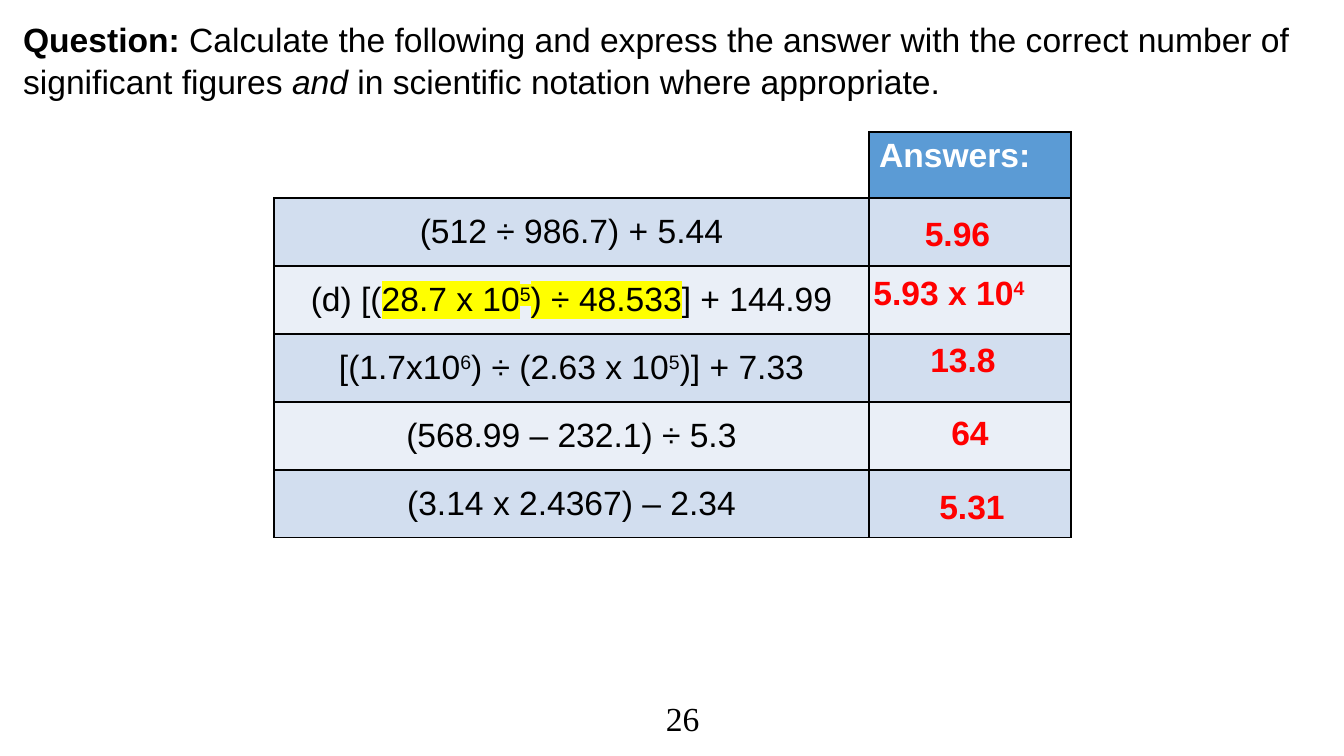
from lxml import etree
from pptx import Presentation
from pptx.dml.color import RGBColor
from pptx.enum.text import MSO_ANCHOR, MSO_AUTO_SIZE, PP_ALIGN
from pptx.oxml.ns import qn
from pptx.util import Emu, Pt

TOP, MID = MSO_ANCHOR.TOP, MSO_ANCHOR.MIDDLE
LEFT, CENTER = PP_ALIGN.LEFT, PP_ALIGN.CENTER
FIXED = MSO_AUTO_SIZE.NONE

BLACK = RGBColor(0x00, 0x00, 0x00)
WHITE = RGBColor(0xFF, 0xFF, 0xFF)
RED = RGBColor(0xFF, 0x00, 0x00)
YELLOW = RGBColor(0xFF, 0xFF, 0x00)
BLUE = RGBColor(0x5B, 0x9B, 0xD5)
PALE = RGBColor(0xD2, 0xDE, 0xEF)
LIGHT = RGBColor(0xEA, 0xEF, 0xF7)

WIDE, HIGH = 1344, 756
SCALE = 12192000 / WIDE
PLAIN = "{2D5ABB26-0587-4C30-8999-92F81FD0307C}"
SIDES = ("lnL", "lnR", "lnT", "lnB")

HEAD, ROW = 66, 68
GRID_X, GRID_Y = 274, 132
SUM_W, ANS_W = 595, 202
BANDS = [PALE, LIGHT, PALE, LIGHT, PALE]

UP = {"up": True}
MARK = {"mark": YELLOW}
QUERY = [
    ("Question: ", {"bold": True}),
    ("Calculate the following and express the answer with the correct number of significant figures ", {}),
    ("and", {"italic": True}),
    (" in scientific notation where appropriate.", {}),
]
SUMS = [
    [("(512 ÷ 986.7) + 5.44", {})],
    [("(d) [(", {}), ("28.7 x 10", MARK), ("5", MARK | UP),
     (") ÷ 48.533", MARK), ("] + 144.99", {})],
    [("[(1.7x10", {}), ("6", UP), (") ÷ (2.63 x 10", {}), ("5", UP),
     (")] + 7.33", {})],
    [("(568.99 – 232.1) ÷ 5.3", {})],
    [("(3.14 x 2.4367) – 2.34", {})],
]
ANSWERS = [
    (866, 201, 183, [("5.96", {})]),
    (857, 260, 184, [("5.93 x 10", {}), ("4", UP)]),
    (862, 327, 202, [("13.8", {})]),
    (869, 400, 202, [("64", {})]),
    (871, 474, 202, [("5.31", {})]),
]


def px(count):
    return Emu(round(count * SCALE))


class Deck:
    style = {"name": "Arial", "size": Pt(24), "bold": False, "italic": False}

    def __init__(self):
        self.show = Presentation()
        self.show.slide_width, self.show.slide_height = px(WIDE), px(HIGH)
        self.slide = self.show.slides.add_slide(self.show.slide_layouts[5])

    def words(self, frame, runs, align=LEFT, color=BLACK, **extra):
        para = frame.paragraphs[0]
        para.alignment = align
        for text, form in runs:
            run = para.add_run()
            run.text = text
            look = self.style | extra | form
            up, mark = look.pop("up", False), look.pop("mark", None)
            for key, value in look.items():
                setattr(run.font, key, value)
            run.font.color.rgb = color
            props = run.font._element
            if up:
                props.set("baseline", "30000")
            if mark:
                light = etree.Element(qn("a:highlight"))
                etree.SubElement(light, qn("a:srgbClr"), val=str(mark))
                props.find(qn("a:solidFill")).addnext(light)
        return para

    def title(self, x, y, w, h, runs):
        shape = self.slide.shapes.title
        place = {"left": x, "top": y, "width": w, "height": h}
        for key, value in place.items():
            setattr(shape, key, px(value))
        frame = shape.text_frame
        form = {"word_wrap": True, "auto_size": FIXED, "vertical_anchor": TOP}
        for key, value in form.items():
            setattr(frame, key, value)
        self.words(frame, runs).line_spacing = 1.06

    def text(self, x, y, w, h, runs, **form):
        box = self.slide.shapes.add_textbox(px(x), px(y), px(w), px(h))
        box.text_frame.word_wrap = True
        self.words(box.text_frame, runs, **form)

    def table(self, x, y, w, rows):
        shape = self.slide.shapes.add_table(
            len(rows), 1, px(x), px(y), px(w), px(sum(rows)))
        shape.element.xpath(".//a:tableStyleId")[0].text = PLAIN
        table = shape.table
        table.first_row = table.horz_banding = False
        for row, size in zip(table.rows, rows):
            row.height = px(size)
        return table

    def cell(self, table, row, runs=(), fill=None, sides=(), anchor=MID, **form):
        cell = table.cell(row, 0)
        cell.vertical_anchor = anchor
        if fill is None:
            cell.fill.background()
        else:
            cell.fill.solid()
            cell.fill.fore_color.rgb = fill
        props = cell._tc.get_or_add_tcPr()
        for spot, side in enumerate(sides):
            line = etree.Element(qn(f"a:{side}"), w=str(Pt(1)))
            paint = etree.SubElement(line, qn("a:solidFill"))
            etree.SubElement(paint, qn("a:srgbClr"), val=str(BLACK))
            props.insert(spot, line)
        self.words(cell.text_frame, runs, **form)


def main():
    deck = Deck()
    deck.title(13, 11, 1293, 92, QUERY)

    rows = [HEAD] + [ROW] * len(SUMS)
    sums = deck.table(GRID_X, GRID_Y, SUM_W, rows)
    keys = deck.table(GRID_X + SUM_W, GRID_Y, ANS_W, rows)
    deck.cell(sums, 0, sides=("lnB",))
    deck.cell(keys, 0, [("Answers:", {})], BLUE, SIDES, TOP,
              color=WHITE, bold=True)
    for row, (runs, band) in enumerate(zip(SUMS, BANDS), 1):
        deck.cell(sums, row, runs, band, SIDES, align=CENTER)
        deck.cell(keys, row, fill=band, sides=SIDES)

    deck.text(656, 693, 55, 50, [("26", {})], name="Times New Roman")

    for x, y, w, runs in ANSWERS:
        table = deck.table(x, y, w, [ROW])
        deck.cell(table, 0, runs, align=CENTER, color=RED, bold=True)

    deck.show.save("out.pptx")


if __name__ == "__main__":
    main()
